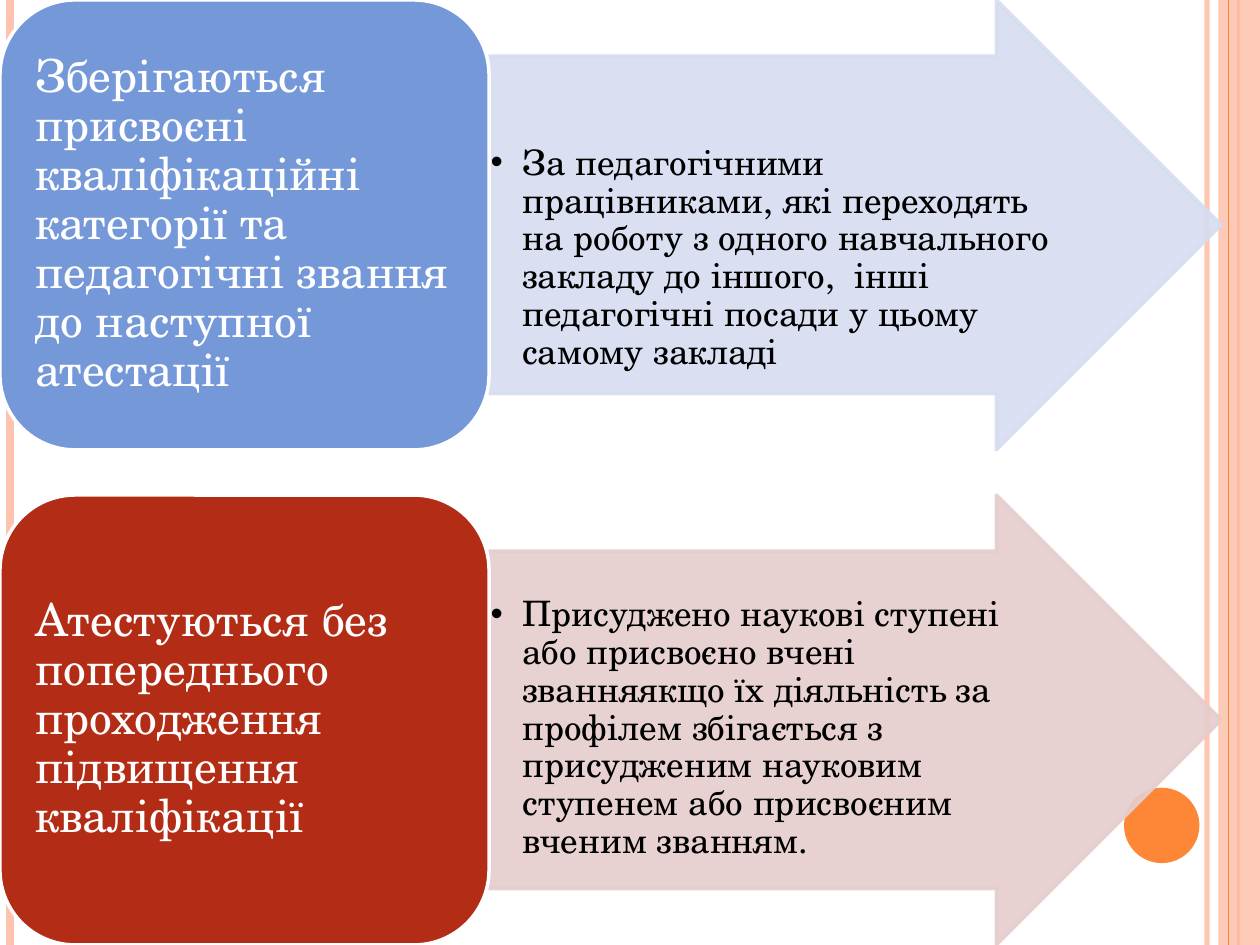
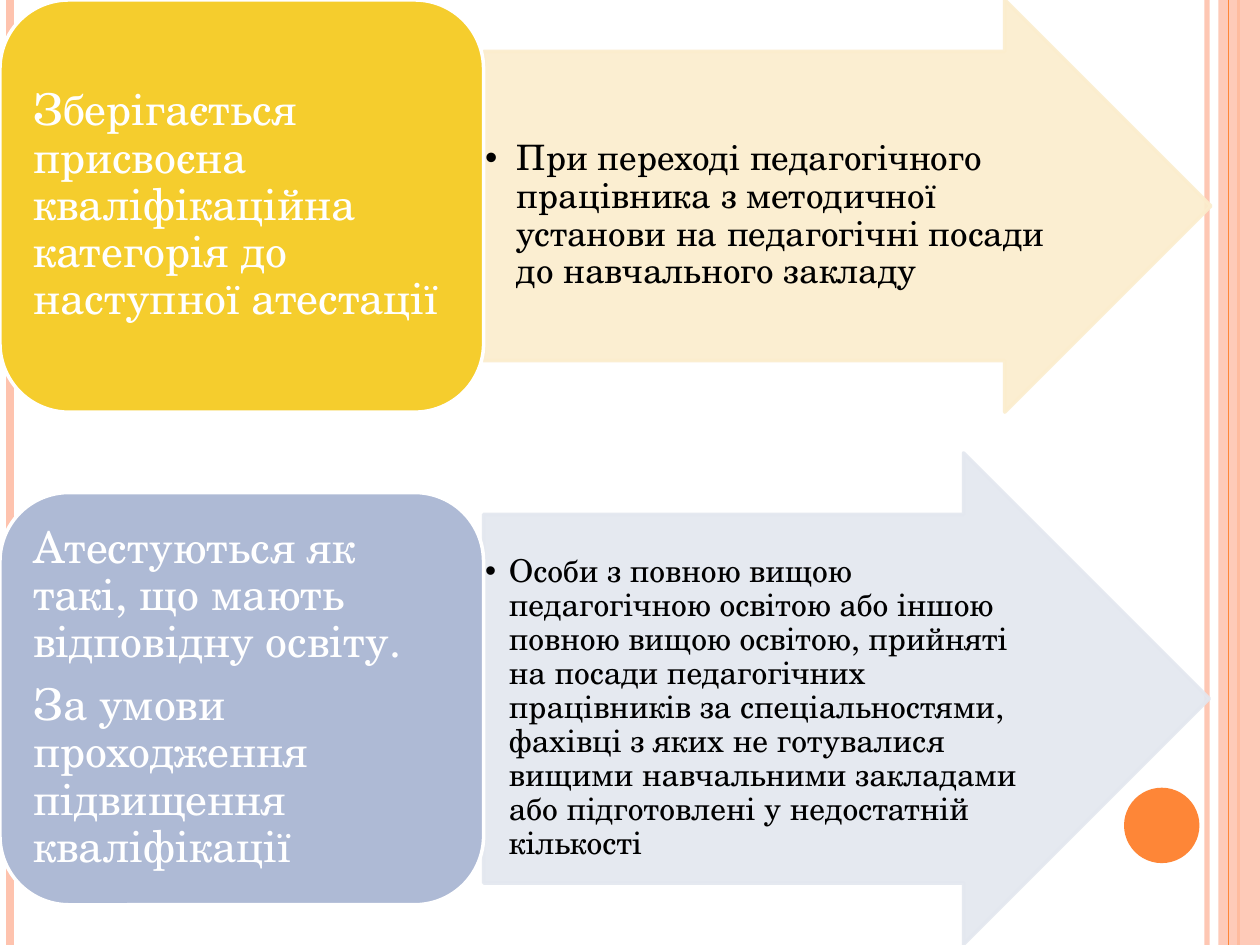
from pptx import Presentation
from pptx.dml.color import RGBColor
from pptx.enum.shapes import MSO_CONNECTOR, MSO_SHAPE
from pptx.enum.text import MSO_ANCHOR, MSO_AUTO_SIZE, PP_ALIGN
from pptx.oxml.ns import qn
from pptx.oxml.xmlchemy import OxmlElement
from pptx.util import Cm, Pt

FONT = "TeX Gyre Schola"
PEACH, ORANGE, WHITE, BLACK = "FEC3AE", "FE8637", "FFFFFF", "000000"
WIDTH, HEIGHT = 25.4, 19.05


def paint(fill, color, opacity=100):
    """Solid colour for a shape fill, a line fill or a font fill."""
    fill.solid()
    fill.fore_color.rgb = RGBColor.from_string(color)
    if opacity < 100:
        alpha = OxmlElement("a:alpha")
        alpha.set("val", str(opacity * 1000))
        fill._xPr.find(qn("a:solidFill"))[0].append(alpha)


def format_text(frame, size, color, space_after):
    frame.word_wrap = True
    frame.auto_size = MSO_AUTO_SIZE.NONE
    for para in frame.paragraphs:
        para.alignment = PP_ALIGN.LEFT
        para.line_spacing = 0.9
        para.space_before = Pt(0)
        para.space_after = Pt(space_after)
        for run in para.runs:
            run.font.name = FONT
            run.font.size = Pt(size)
            paint(run.font.fill, color)


# Each row: box top, box colour, box text, arrow size, arrow colour,
# list size, list indent, list top margin, list text
slides_content = [
    {"box_size": (9.86, 9.07), "box_font": 26, "rows": [
        (0, "7598D9",
         "Зберігаються присвоєні кваліфікаційні категорії та педагогічні "
         "звання до наступної атестації",
         (14.76, 9.07), "D6DDF1", 20, 0.64, 1.79,
         "За педагогічними працівниками, які переходять на роботу з одного "
         "навчального закладу до іншого,  інші педагогічні посади у цьому "
         "самому закладі"),
        (9.98, "B32C16",
         "Атестуються без попереднього проходження підвищення кваліфікації",
         (14.76, 9.07), "E5CDCC", 20, 0.64, 0.91,
         "Присуджено наукові ступені або присвоєно вчені званняякщо їх "
         "діяльність за профілем збігається з присудженим науковим ступенем "
         "або присвоєним вченим званням."),
    ]},
    {"box_size": (9.75, 8.31), "box_font": 25, "rows": [
        (0, "F5CD2D",
         "Зберігається присвоєна кваліфікаційна категорія до наступної "
         "атестації",
         (14.66, 8.31), "FBEDCD", 20, 0.64, 1.79,
         "При переході педагогічного працівника з методичної установи на "
         "педагогічні посади до навчального закладу"),
        (9.93, "AEBAD5",
         "Атестуються як такі, що мають відповідну освіту.\n"
         "За умови проходження підвищення кваліфікації",
         (14.63, 9.91), "E3E7EF", 18, 0.48, 0.82,
         "Особи з повною вищою педагогічною освітою або іншою повною вищою "
         "освітою, прийняті на посади педагогічних працівників за "
         "спеціальностями, фахівці з яких не готувалися вищими навчальними "
         "закладами або підготовлені у недостатній кількості"),
    ]},
]

deck = Presentation()
deck.slide_width, deck.slide_height = Cm(WIDTH), Cm(HEIGHT)
layout = deck.slide_layouts.get_by_name("Two Content")
slides = [deck.slides.add_slide(layout) for content in slides_content]

# Shared decoration: side lines, right band and circle, kept on the layout
shapes = slides[0].shapes
decoration = []
for x, color, weight, opacity in [(24.33, PEACH, 3, 93), (0.2, PEACH, 4.5, 100),
                                  (24.97, ORANGE, 1.5, 100),
                                  (24.77, ORANGE, 0.75, 100)]:
    side_line = shapes.add_connector(MSO_CONNECTOR.STRAIGHT,
                                     Cm(x), Cm(0), Cm(x), Cm(HEIGHT))
    paint(side_line.line.fill, color, opacity)
    side_line.line.width = Pt(weight)
    side_line.element.spPr.append(OxmlElement("a:effectLst"))
    decoration.append(side_line)

for kind, place, color, opacity in [
        (MSO_SHAPE.RECTANGLE, (24.56, 0, 0.84, HEIGHT), PEACH, 87),
        (MSO_SHAPE.OVAL, (22.66, 15.88, 1.52, 1.52), ORANGE, 100)]:
    ornament = shapes.add_shape(kind, *map(Cm, place))
    paint(ornament.fill, color, opacity)
    ornament.line.fill.background()
    ornament.shadow.inherit = False
    decoration.append(ornament)

# The band lies between the third and the fourth line
decoration.insert(3, decoration.pop(4))
for number, ornament in enumerate(decoration, start=101):
    ornament.element.xpath("./*/p:cNvPr")[0].set("id", str(number))
    layout.shapes.element.append(ornament.element)

# Rows: an arrow with a list, and a rounded box at its tail
for slide, content in zip(slides, slides_content):
    shapes = slide.shapes
    shapes.element.remove(shapes.title.element)
    box_width, box_height = content["box_size"]
    for body, row in zip(list(slide.placeholders), content["rows"]):
        (box_top, box_color, box_text, (arrow_width, arrow_height), arrow_color,
         list_size, indent, list_margin, list_text) = row

        # Arrow, centred on the box
        arrow_top = box_top + (box_height - arrow_height) / 2
        arrow = shapes.add_shape(MSO_SHAPE.RIGHT_ARROW, Cm(box_width), Cm(arrow_top),
                                 Cm(arrow_width), Cm(arrow_height))
        arrow.adjustments[0], arrow.adjustments[1] = 0.75, 0.5
        paint(arrow.fill, arrow_color, 90)
        paint(arrow.line.fill, arrow_color, 90)

        # List on the arrow shaft
        body.left, body.top = Cm(box_width), Cm(arrow_top + arrow_height / 8)
        body.width = Cm(arrow_width - 0.375 * arrow_height)
        body.height = Cm(0.75 * arrow_height)
        frame = body.text_frame
        frame.text = list_text
        frame.vertical_anchor = MSO_ANCHOR.TOP
        frame.margin_left = frame.margin_right = frame.margin_bottom = Cm(0.03)
        frame.margin_top = Cm(list_margin)
        format_text(frame, list_size, BLACK, 3)
        for para in frame.paragraphs:
            properties = para._p.get_or_add_pPr()
            properties.set("marL", str(Cm(indent)))
            properties.set("indent", str(-Cm(indent)))
        shapes.element.append(body.element)

        # Rounded box
        box = shapes.add_shape(MSO_SHAPE.ROUNDED_RECTANGLE, Cm(0), Cm(box_top),
                               Cm(box_width), Cm(box_height))
        paint(box.fill, box_color)
        paint(box.line.fill, WHITE)
        box.text_frame.text = box_text
        box.text_frame.vertical_anchor = MSO_ANCHOR.MIDDLE
        box.text_frame.margin_left = box.text_frame.margin_right = Cm(0.27)
        format_text(box.text_frame, content["box_font"], WHITE, 9)

        for shape in (arrow, box):
            shape.line.width = Pt(2)
            shape.shadow.inherit = False

deck.save("out.pptx")
